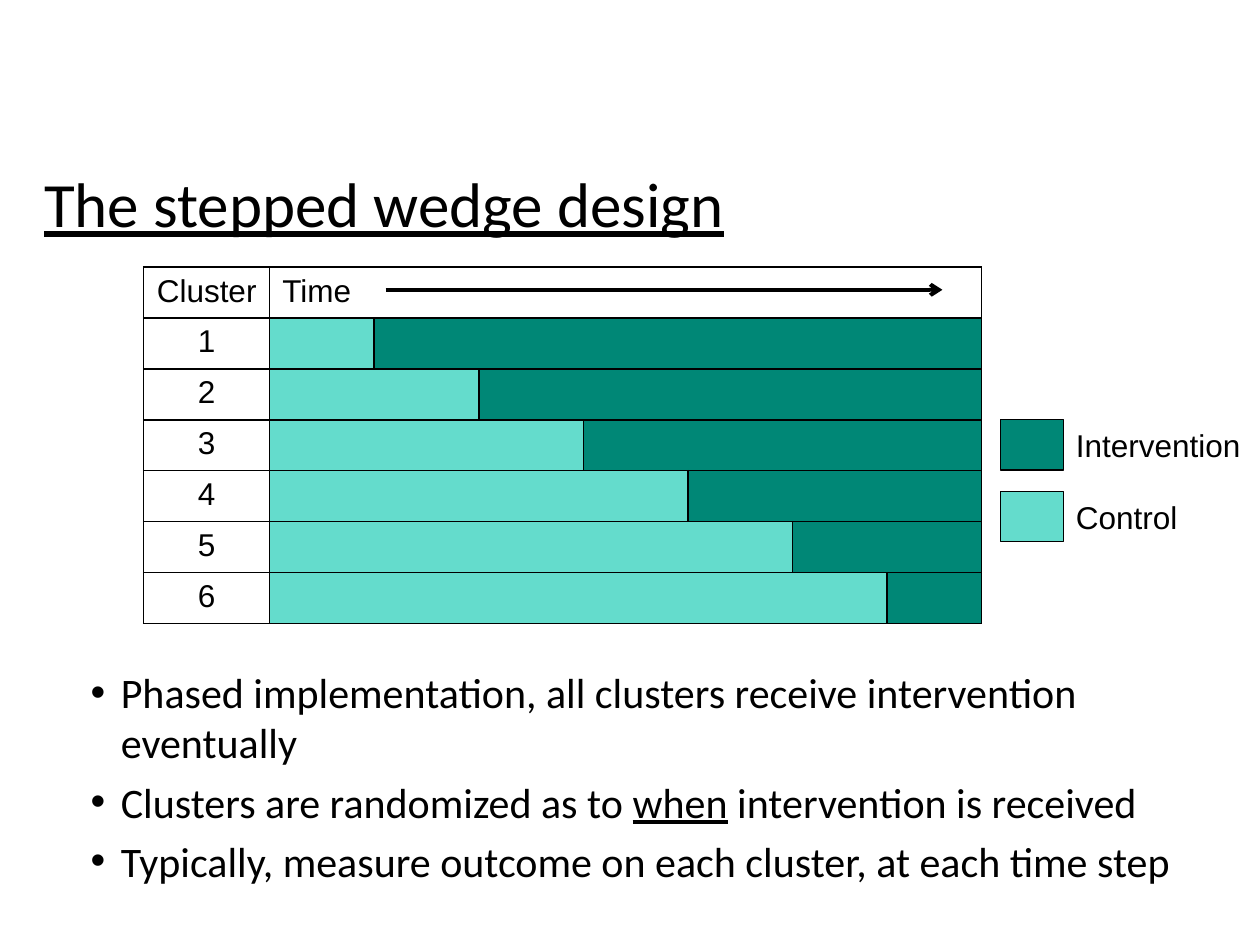
from lxml.etree import SubElement
from pptx import Presentation
from pptx.dml.color import RGBColor
from pptx.enum.shapes import MSO_CONNECTOR, MSO_SHAPE
from pptx.enum.text import MSO_ANCHOR, PP_ALIGN
from pptx.oxml import parse_xml
from pptx.oxml.ns import nsdecls, qn
from pptx.util import Inches, Pt

COLORS = {"ink": "000000", "control": "64DCCC", "intervention": "008776"}


def color(name):
    return RGBColor.from_string(COLORS[name])


class SlideBuilder:
    """Holds the text styles and the current slide."""

    heading = {"name": "Calibri", "size": Pt(36), "underline": True}
    body = {"name": "Calibri", "size": Pt(24)}
    label = {"name": "Arial", "size": Pt(18)}

    def __init__(self, page):
        self.page = page

    def add_span(self, para, text, style, **extra):
        span = para.add_run()
        span.text = text
        for key, value in {**style, **extra}.items():
            setattr(span.font, key, value)
        span.font.color.rgb = color("ink")

    def title(self, text, *place):
        box = self.page.shapes.title
        for key, value in zip(("left", "top", "width", "height"), place):
            setattr(box, key, Inches(value))
        box.text_frame.vertical_anchor = MSO_ANCHOR.MIDDLE
        para = box.text_frame.paragraphs[0]
        para.alignment = PP_ALIGN.LEFT
        self.add_span(para, text, self.heading)

    def text_box(self, *place):
        box = self.page.shapes.add_textbox(*map(Inches, place))
        box.text_frame.word_wrap = True
        return box.text_frame

    def bullets(self, items, *place):
        frame = self.text_box(*place)
        for index, spans in enumerate(items):
            para = frame.add_paragraph() if index else frame.paragraphs[0]
            props = para._p.get_or_add_pPr()
            props.set("marL", str(Inches(0.24)))
            props.set("indent", str(-Inches(0.24)))
            SubElement(props, qn("a:buFont")).set("typeface", "Arial")
            SubElement(props, qn("a:buChar")).set("char", "•")
            para.space_before = Pt(5 if index else 0)
            for text, underline in spans:
                self.add_span(para, text, self.body, underline=underline)

    def cell(self, cell, text="", fill=None, align=PP_ALIGN.LEFT):
        if fill:
            cell.fill.solid()
            cell.fill.fore_color.rgb = color(fill)
        else:
            cell.fill.background()
        if text:
            para = cell.text_frame.paragraphs[0]
            para.alignment = align
            self.add_span(para, text, self.label)

    def borders(self, cell):
        props = cell._tc.get_or_add_tcPr()
        for index, side in enumerate(("lnL", "lnR", "lnT", "lnB")):
            props.insert(index, parse_xml(
                f'<a:{side} {nsdecls("a")} w="{Pt(1)}"><a:solidFill>'
                f'<a:srgbClr val="{COLORS["ink"]}"/></a:solidFill></a:{side}>'))

    def wedge_table(self, clusters, widths, *place):
        rows, columns = clusters + 1, len(widths)
        frame = self.page.shapes.add_table(rows, columns, *map(Inches, place))
        table = frame.table
        table.first_row = table.horz_banding = False
        for column, width in zip(table.columns, widths):
            column.width = Inches(width)
        last = columns - 1
        for row in range(rows):
            # Row 0 is the header; each later row switches one step later
            for col in range(columns):
                fill = None
                if row and col:
                    fill = "control" if col <= row else "intervention"
                self.cell(table.cell(row, col), fill=fill)
                self.borders(table.cell(row, col))
            self.cell(table.cell(row, 0), str(row) if row else "Cluster",
                      align=PP_ALIGN.CENTER)
            spans = [(1, row), (row + 1, last)] if row else [(1, last)]
            for start, end in spans:
                if end > start:
                    table.cell(row, start).merge(table.cell(row, end))
        self.cell(table.cell(0, 1), "Time")

    def arrow(self, *ends):
        line = self.page.shapes.add_connector(
            MSO_CONNECTOR.STRAIGHT, *map(Inches, ends))
        line.line.color.rgb = color("ink")
        line.line.width = Pt(2.25)
        outline = line._element.spPr.find(qn("a:ln"))
        SubElement(outline, qn("a:tailEnd")).set("type", "arrow")
        SubElement(line._element.spPr, qn("a:effectLst"))

    def legend_entry(self, text, fill, left, top):
        swatch = self.page.shapes.add_shape(
            MSO_SHAPE.RECTANGLE, *map(Inches, (left, top, 0.5, 0.4)))
        swatch.shadow.inherit = False
        swatch.fill.solid()
        swatch.fill.fore_color.rgb = color(fill)
        swatch.line.color.rgb = color("ink")
        swatch.line.width = Pt(0.75)
        frame = self.text_box(left + 0.5, top, 1.63, 0.4)
        self.add_span(frame.paragraphs[0], text, self.label)


def main():
    deck = Presentation()
    deck.slide_width, deck.slide_height = Inches(10), Inches(7.5)
    builder = SlideBuilder(deck.slides.add_slide(deck.slide_layouts[5]))

    builder.title("The stepped wedge design", 0.25, 1.17, 6.5, 0.87)

    # Bullet points
    builder.bullets([
        [("Phased implementation, all clusters receive intervention eventually", False)],
        [("Clusters are randomized as to ", False), ("when", True),
         (" intervention is received", False)],
        [("Typically, measure outcome on each cluster, at each time step", False)],
    ], 0.62, 5.24, 8.79, 1.88)

    # Stepped wedge with its time arrow
    builder.wedge_table(6, [1] + [0.83] * 5 + [0.75] * 2, 1.14, 2.12, 6.67, 2.83)
    builder.arrow(3.06, 2.3, 7.48, 2.3)

    # Legend
    for index, name in enumerate(("Intervention", "Control")):
        builder.legend_entry(name, name.lower(), 7.94, 3.33 + 0.57 * index)

    deck.save("out.pptx")


if __name__ == "__main__":
    main()
